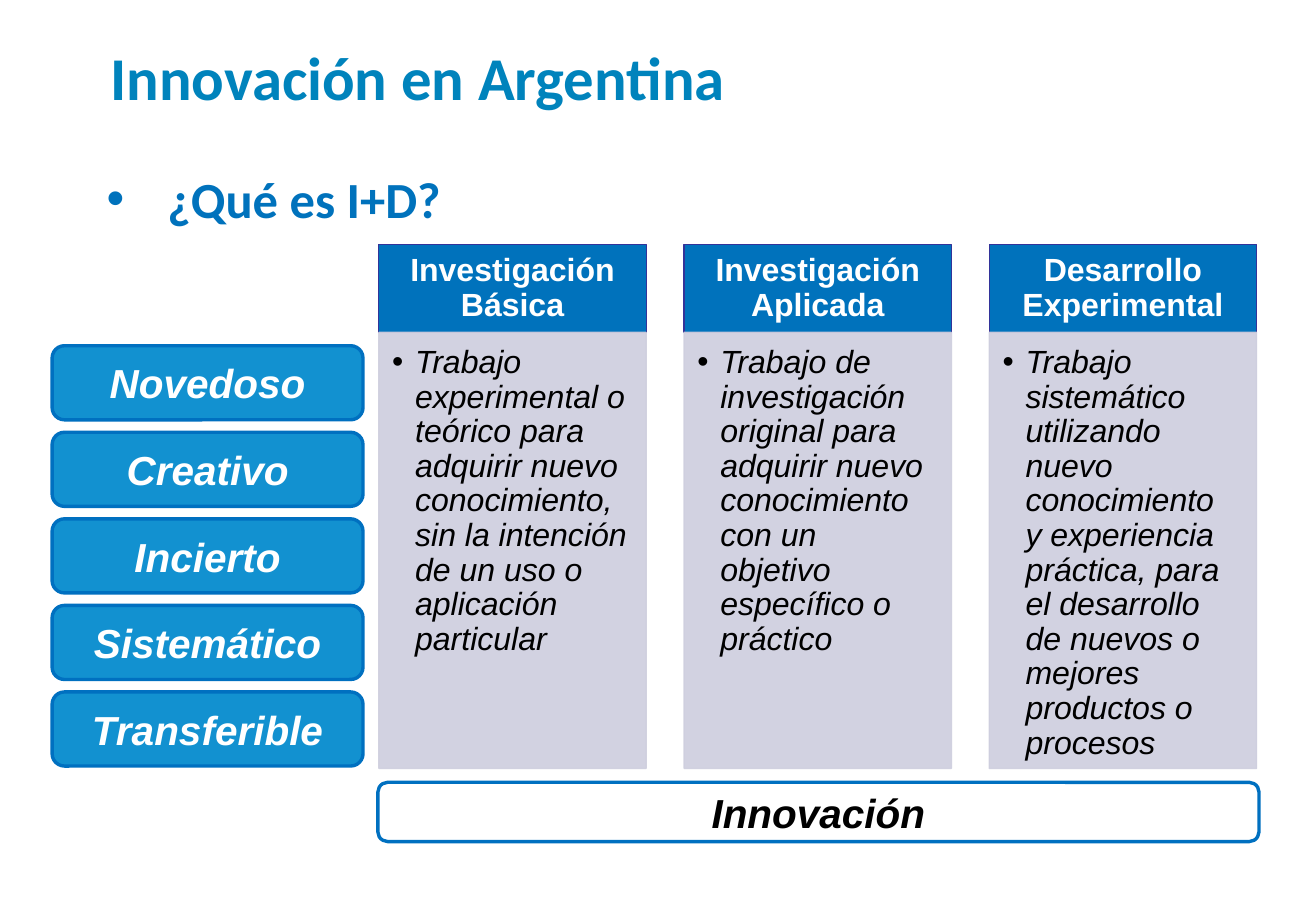
from lxml import etree
from pptx import Presentation
from pptx.dml.color import RGBColor
from pptx.enum.shapes import MSO_SHAPE
from pptx.enum.text import MSO_ANCHOR, MSO_AUTO_SIZE, PP_ALIGN
from pptx.oxml.ns import qn
from pptx.util import Cm, Pt

TITLE = "Innovación en Argentina"
QUESTION = "¿Qué es I+D?"
TRAITS = ["Novedoso", "Creativo", "Incierto", "Sistemático", "Transferible"]
COLUMNS = [
    ("Investigación Básica",
     "Trabajo experimental o teórico para adquirir nuevo conocimiento, "
     "sin la intención de un uso o aplicación particular"),
    ("Investigación Aplicada",
     "Trabajo de investigación original para adquirir nuevo conocimiento "
     "con un objetivo específico o práctico"),
    ("Desarrollo Experimental",
     "Trabajo sistemático utilizando nuevo conocimiento y experiencia "
     "práctica, para el desarrollo de nuevos o mejores productos o procesos"),
]
RESULT = "Innovación"

TITLE_BLUE = RGBColor(0x00, 0x83, 0xBC)
BLUE = RGBColor(0x00, 0x72, 0xBC)
EDGE_BLUE = RGBColor(0x00, 0x70, 0xC0)
TRAIT_BLUE = RGBColor(0x12, 0x91, 0xD0)
NAVY = RGBColor(0x33, 0x33, 0x99)
LAVENDER = RGBColor(0xCE, 0xCE, 0xDE)
WHITE = RGBColor(0xFF, 0xFF, 0xFF)
BLACK = RGBColor(0x00, 0x00, 0x00)

RECT, ROUNDED = MSO_SHAPE.RECTANGLE, MSO_SHAPE.ROUNDED_RECTANGLE
TOP, MIDDLE = MSO_ANCHOR.TOP, MSO_ANCHOR.MIDDLE
LEFT, CENTER = PP_ALIGN.LEFT, PP_ALIGN.CENTER
NO_AUTOFIT = MSO_AUTO_SIZE.NONE

# Lengths in centimetres
TRAIT_LEFT, TRAIT_TOP, TRAIT_PITCH = 1.09, 7.23, 1.81
TRAIT_WIDTH, TRAIT_HEIGHT = 6.5, 1.55
COLUMN_LEFT, COLUMN_PITCH, COLUMN_WIDTH = 7.92, 6.38, 5.59
HEADER_TOP, HEADER_HEIGHT, DETAIL_HEIGHT = 5.11, 1.84, 9.12
DEFAULT_MARGINS = (0.25, 0.13, 0.25, 0.13)
HEADER_MARGINS = (0.38, 0.2, 0.38, 0.2)
DETAIL_MARGINS = (0.28, 0.28, 0.38, 0.43)


def write(box, text, *, size, color, font="Arial", bold=False, italic=False,
          align=CENTER, anchor=MIDDLE, margins=DEFAULT_MARGINS,
          line_spacing=1.0, bullet_indent=None):
    frame = box.text_frame
    frame.word_wrap = True
    frame.auto_size = NO_AUTOFIT
    frame.vertical_anchor = anchor
    (frame.margin_left, frame.margin_top,
     frame.margin_right, frame.margin_bottom) = map(Cm, margins)
    para = frame.paragraphs[0]
    if bullet_indent:
        props = para._p.get_or_add_pPr()
        props.set("marL", str(Cm(bullet_indent)))
        props.set("indent", str(-Cm(bullet_indent)))
        etree.SubElement(props, qn("a:buFont")).set("typeface", "Arial")
        etree.SubElement(props, qn("a:buChar")).set("char", "•")
    para.alignment = align
    para.line_spacing = line_spacing
    para.space_before = Pt(0)
    span = para.add_run()
    span.text = text
    span.font.name = font
    span.font.size = Pt(size)
    span.font.bold = bold
    span.font.italic = italic
    span.font.color.rgb = color


def place(box, left, top, width, height):
    box.left, box.top, box.width, box.height = map(Cm, (left, top, width, height))


def add_box(page, kind, left, top, width, height, *, fill, line, weight):
    box = page.shapes.add_shape(kind, *map(Cm, (left, top, width, height)))
    box.shadow.inherit = False
    if fill is None:
        box.fill.background()
    else:
        box.fill.solid()
        box.fill.fore_color.rgb = fill
    box.line.color.rgb = line
    box.line.width = Pt(weight)
    return box


def set_opacity(box, percent):
    for color in box._element.spPr.iter(qn("a:srgbClr")):
        etree.SubElement(color, qn("a:alpha")).set("val", str(percent * 1000))


def main():
    deck = Presentation()
    deck.slide_width, deck.slide_height = Cm(27.51), Cm(19.05)
    page = deck.slides.add_slide(deck.slide_layouts[1])

    title, question = page.placeholders
    place(title, 2.06, 0.69, 16.69, 1.8)
    write(title, TITLE, size=36, color=TITLE_BLUE, font="Calibri", bold=True,
          align=LEFT)
    place(question, 1.98, 3.38, 23.22, 1.55)
    write(question, QUESTION, size=30, color=BLUE, font="Calibri", bold=True,
          align=LEFT, anchor=TOP, bullet_indent=1.27)

    for row, trait in enumerate(TRAITS):
        box = add_box(page, ROUNDED, TRAIT_LEFT, TRAIT_TOP + row * TRAIT_PITCH,
                      TRAIT_WIDTH, TRAIT_HEIGHT,
                      fill=TRAIT_BLUE, line=EDGE_BLUE, weight=2)
        write(box, trait, size=24, color=WHITE, bold=True, italic=True)

    for index, (heading, detail) in enumerate(COLUMNS):
        left = COLUMN_LEFT + index * COLUMN_PITCH
        header = add_box(page, RECT, left, HEADER_TOP, COLUMN_WIDTH,
                         HEADER_HEIGHT, fill=BLUE, line=NAVY, weight=0.75)
        write(header, heading, size=19, color=WHITE, bold=True,
              margins=HEADER_MARGINS, line_spacing=0.9)
        panel = add_box(page, RECT, left, HEADER_TOP + HEADER_HEIGHT,
                        COLUMN_WIDTH, DETAIL_HEIGHT,
                        fill=LAVENDER, line=LAVENDER, weight=0.75)
        set_opacity(panel, 90)
        write(panel, detail, size=19, color=BLACK, italic=True, align=LEFT,
              anchor=TOP, margins=DETAIL_MARGINS, line_spacing=0.9,
              bullet_indent=0.48)

    result = add_box(page, ROUNDED, 7.9, 16.36, 18.42, 1.24,
                     fill=None, line=EDGE_BLUE, weight=2)
    write(result, RESULT, size=24, color=BLACK, bold=True, italic=True)

    deck.save("out.pptx")


if __name__ == "__main__":
    main()
